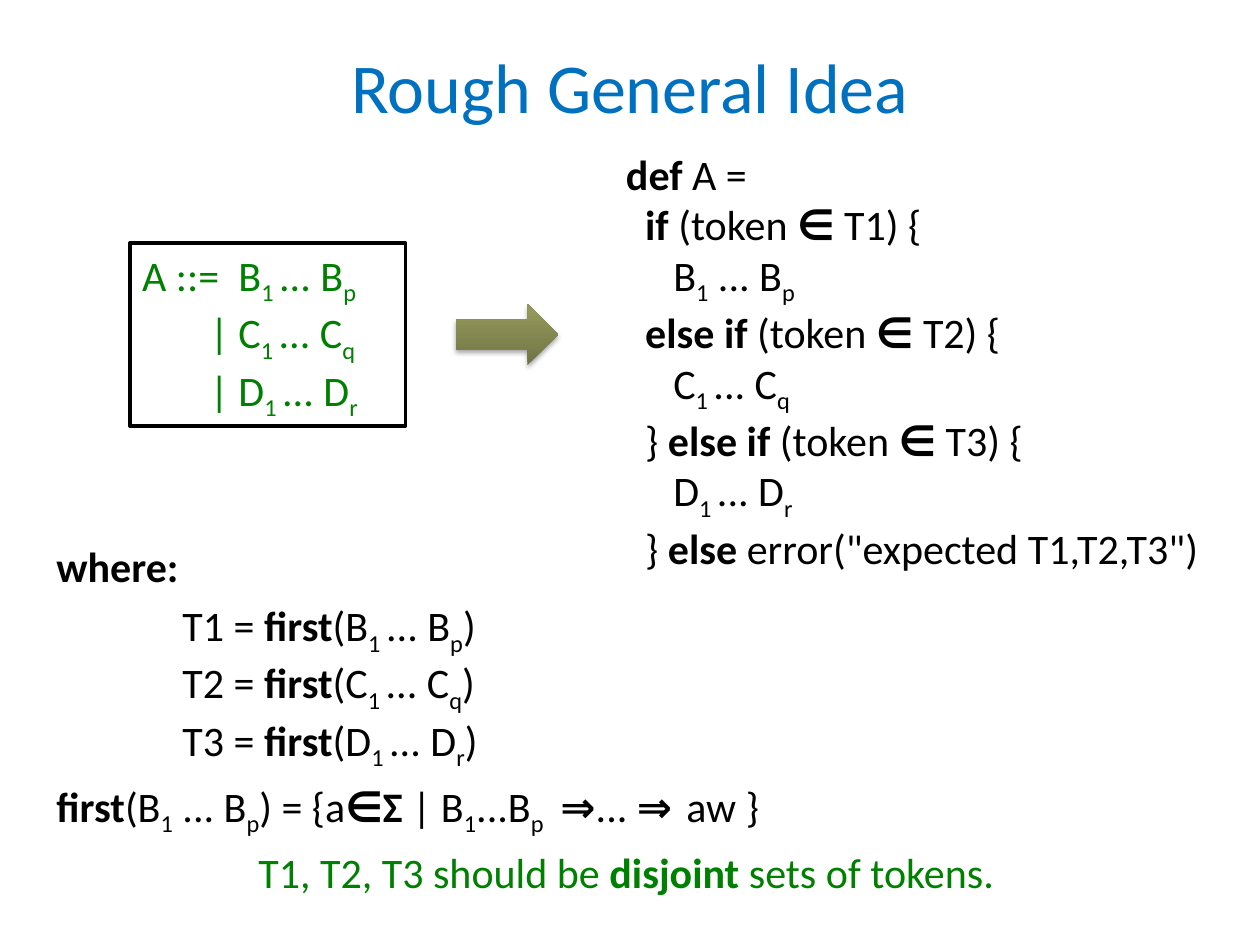
from lxml.etree import SubElement
from pptx import Presentation
from pptx.dml.color import RGBColor
from pptx.enum.shapes import MSO_SHAPE as Shape
from pptx.enum.text import MSO_ANCHOR as Anchor, PP_ALIGN as Align
from pptx.oxml.ns import qn
from pptx.util import Pt

BLUE = RGBColor(0x00, 0x70, 0xC0)
GREEN = RGBColor(0x00, 0x80, 0x00)
BLACK = RGBColor(0, 0, 0)
WHITE = RGBColor(255, 255, 255)
OLIVE_DARK = RGBColor(0x70, 0x74, 0x46)
OLIVE = RGBColor(0x93, 0x98, 0x5A)
FONT = "Calibri"


def add_line(frame, text, color, margin=0, indent=0, before=0):
    """Add a paragraph; * switches bold and _ switches subscript."""
    para = frame.paragraphs[0]
    if para.runs:
        para = frame.add_paragraph()
    para.alignment = Align.LEFT
    para.space_before = Pt(before)
    para.font.name, para.font.size = FONT, Pt(24)
    para.font.color.rgb = color
    properties = para._p.get_or_add_pPr()
    properties.set("marL", str(Pt(margin)))
    properties.set("indent", str(Pt(indent)))
    for i, bold_part in enumerate(text.split("*")):
        for j, part in enumerate(bold_part.split("_")):
            if part:
                span = para.add_run()
                span.text = part
                span.font.bold = i % 2 == 1
                if j % 2:
                    span.font._element.set("baseline", "-25000")
    return para


deck = Presentation()
deck.slide_width, deck.slide_height = Pt(720), Pt(540)
page = deck.slides.add_slide(deck.slide_layouts[5])

# Title
title = page.shapes.title
title.left, title.top, title.width, title.height = Pt(36), Pt(12.24), Pt(648), Pt(72.72)
title.text_frame.text = "Rough General Idea"
title.text_frame.vertical_anchor = Anchor.MIDDLE
para = title.text_frame.paragraphs[0]
para.alignment = Align.CENTER
para.font.name, para.font.size = FONT, Pt(40)
para.font.color.rgb = BLUE

# Grammar rule; hanging indents line up the alternatives
grammar = page.shapes.add_shape(Shape.RECTANGLE, Pt(74.16), Pt(138.96), Pt(157.68), Pt(104.4))
grammar.shadow.inherit = False
grammar.fill.solid()
grammar.fill.fore_color.rgb = WHITE
grammar.line.color.rgb = BLACK
grammar.line.width = Pt(2)
grammar.text_frame.vertical_anchor = Anchor.TOP
for text, indent in [
    ("A ::=\tB_1 _... B_p_", -55),
    ("|\tC_1 _... C_q_", -16.5),
    ("|\tD_1 _... D_r_", -16.5),
]:
    add_line(grammar.text_frame, text, GREEN, 55, indent)

# Generated parser code
code = page.shapes.add_textbox(Pt(350.64), Pt(81.36), Pt(362.88), Pt(249.84))
code.text_frame.word_wrap = True
for text, margin in [
    ("*def* A =", 0),
    ("*if* (token *∈ *T1) {", 11),
    ("B_1_ ... B_p_", 27),
    ("*else if* (token* ∈ *T2) {", 11),
    ("C_1 _... C_q_", 27),
    ("} *else if* (token* ∈ *T3) {", 11),
    ("D_1 _... D_r_", 27),
    ('} *else* error("expected T1,T2,T3")', 11),
]:
    add_line(code.text_frame, text, BLACK, margin)

# Arrow from grammar to code
arrow = page.shapes.add_shape(Shape.RIGHT_ARROW, Pt(260.64), Pt(173.52), Pt(58.32), Pt(35.28))
arrow.line.fill.background()
arrow.fill.gradient()
arrow.fill.gradient_angle = 90
for stop, color, position in zip(arrow.fill.gradient_stops, (OLIVE_DARK, OLIVE), (0, 0.9)):
    stop.color.rgb = color
    stop.position = position
arrow.shadow.inherit = False
effects = arrow._element.spPr.find(qn("a:effectLst"))
shadow = SubElement(effects, qn("a:outerShdw"), blurRad=str(Pt(3.1)), dist=str(Pt(1.8)),
                    dir="5400000", rotWithShape="0")
shade = SubElement(shadow, qn("a:srgbClr"), val="000000")
SubElement(shade, qn("a:alpha"), val="35000")

# Definition of the token sets
sets = page.shapes.add_textbox(Pt(25.2), Pt(305.28), Pt(665.28), Pt(151.92))
sets.text_frame.word_wrap = True
add_line(sets.text_frame, "*where:*", BLACK)
for number, (letter, last) in enumerate(("Bp", "Cq", "Dr"), 1):
    add_line(sets.text_frame, f"T{number} = *first*({letter}_1 _... {letter}_{last}_)",
             BLACK, margin=72, before=5 if number == 1 else 0)
first = add_line(sets.text_frame,
                 "*first*(B_1_ ... B_p_) = {a*∈Σ* | B_1_...B_p_\t*⇒*...* ⇒*\taw }",
                 BLACK, before=5)
tabs = SubElement(first._p.get_or_add_pPr(), qn("a:tabLst"))
for position in (292, 371):
    SubElement(tabs, qn("a:tab"), pos=str(Pt(position)), algn="l")
note = add_line(sets.text_frame, "T1, T2, T3 should be *disjoint *sets of tokens.", GREEN, before=5)
note.alignment = Align.CENTER

deck.save("out.pptx")
